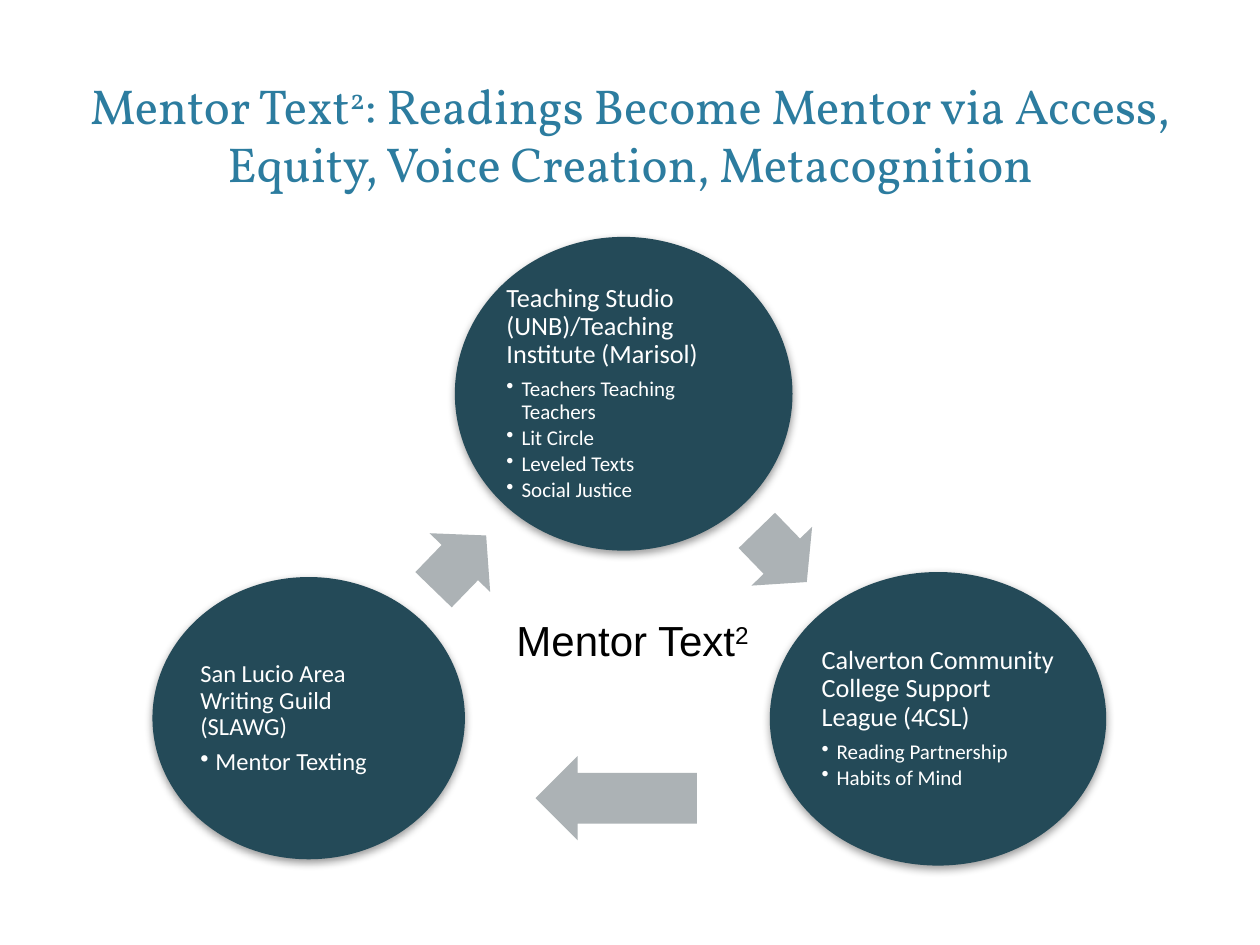
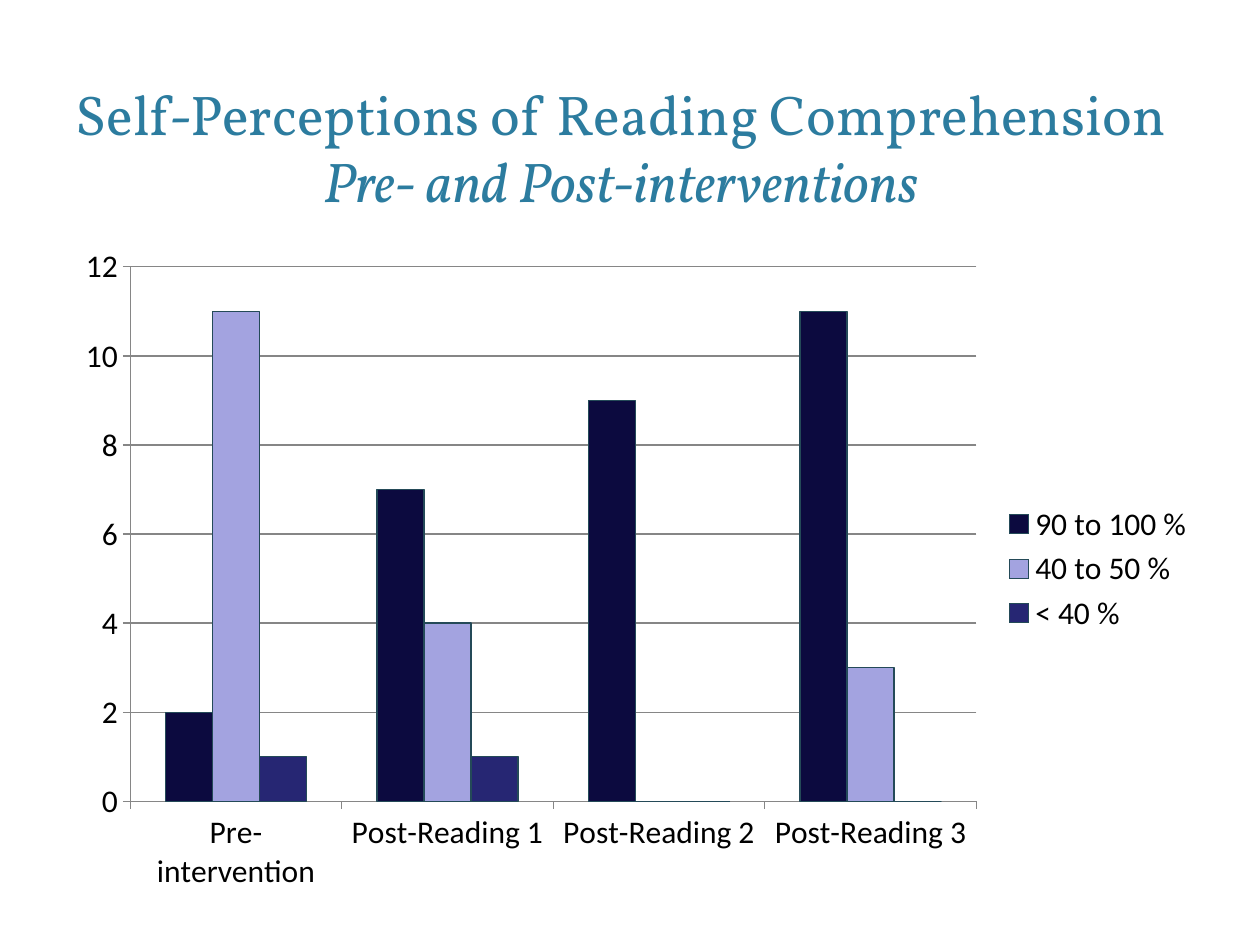
import pptx
import pptx.chart.data
import pptx.dml.color
import pptx.enum.chart
import pptx.enum.shapes
import pptx.enum.text
import pptx.oxml
import pptx.oxml.ns
import pptx.util
from lxml import etree

Inches, Pt = pptx.util.Inches, pptx.util.Pt
RGBColor = pptx.dml.color.RGBColor
MSO_SHAPE = pptx.enum.shapes.MSO_SHAPE
MSO_ANCHOR = pptx.enum.text.MSO_ANCHOR
PP_ALIGN = pptx.enum.text.PP_ALIGN
qn = pptx.oxml.ns.qn

TITLE_BLUE = RGBColor(0x2C, 0x7C, 0x9F)
TEAL = RGBColor(0x24, 0x4A, 0x58)
ARROW_GRAY = RGBColor(0xAC, 0xB2, 0xB5)
AXIS_GRAY = RGBColor(0x86, 0x86, 0x86)
WHITE = RGBColor(0xFF, 0xFF, 0xFF)
BLACK = RGBColor(0, 0, 0)
NAVY = RGBColor(0x0C, 0x0A, 0x3F)
LAVENDER = RGBColor(0xA3, 0xA3, 0xE0)
INDIGO = RGBColor(0x26, 0x26, 0x73)

TITLE_FONT, BODY_FONT, LABEL_FONT = "Vollkorn", "Calibri", "Arial"

SHADOW = """<a:effectLst xmlns:a="http://schemas.openxmlformats.org/drawingml/2006/main">
<a:outerShdw blurRad="63500" dist="25400" dir="5400000" rotWithShape="0">
<a:srgbClr val="000000"><a:alpha val="40000"/></a:srgbClr></a:outerShdw></a:effectLst>"""

# Circles: box, text box, heading, heading size, bullets, bullet size
CIRCLES = [
    ((3.61, 1.88, 2.68, 2.49), (4, 2.24, 1.9, 1.76),
     "Teaching Studio (UNB)/Teaching Institute (Marisol)", 15,
     ["Teachers Teaching Teachers", "Lit Circle", "Leveled Texts", "Social Justice"], 12),
    ((6.11, 4.54, 2.67, 2.33), (6.5, 4.88, 1.89, 1.64),
     "Calverton Community College Support League (4CSL)", 15,
     ["Reading Partnership", "Habits of Mind"], 12),
    ((1.21, 4.58, 2.48, 2.24), (1.57, 4.91, 1.76, 1.59),
     "San Lucio Area Writing Guild (SLAWG)", 14, ["Mentor Texting"], 14),
]
# Arrows: box, rotation
ARROWS = [
    ((5.92, 4.08, 0.57, 0.67), 45.9),
    ((4.25, 6, 1.28, 0.67), 180),
    ((3.35, 4.13, 0.6, 0.67), 314.1),
]

CATEGORIES = ["Pre-intervention", "Post-Reading 1", "Post-Reading 2", "Post-Reading 3"]
SERIES = [
    ("90 to 100 %", (2, 7, 9, 11), NAVY),
    ("40 to 50 %", (11, 4, 0, 3), LAVENDER),
    ("< 40 %", (1, 1, 0, 0), INDIGO),
]


def inches(box):
    return [Inches(v) for v in box]


def set_font(font, name, size, color):
    font.name, font.size = name, Pt(size)
    font.color.rgb = color


def add_run(p, text, superscript=False):
    r = p.add_run()
    r.text = text
    if superscript:
        r.font._element.set("baseline", "30000")
    return r


def add_title_slide(prs, box, size):
    """Add a title-only slide; return it with its title paragraph."""
    s = prs.slides.add_slide(prs.slide_layouts[5])
    title = s.shapes.title
    title.left, title.top, title.width, title.height = inches(box)
    tf = title.text_frame
    tf.auto_size = pptx.enum.text.MSO_AUTO_SIZE.NONE
    tf.vertical_anchor = MSO_ANCHOR.BOTTOM
    p = tf.paragraphs[0]
    p.alignment = PP_ALIGN.CENTER
    set_font(p.font, TITLE_FONT, size, TITLE_BLUE)
    return s, p


def add_plain_shape(s, kind, box, color):
    sp = s.shapes.add_shape(kind, *inches(box))
    sp.shadow.inherit = False
    sp.fill.solid()
    sp.fill.fore_color.rgb = color
    sp.line.fill.background()
    return sp


def add_bullet(p):
    pPr = p._p.get_or_add_pPr()
    pPr.set("marL", str(Inches(0.12)))
    pPr.set("indent", str(-Inches(0.12)))
    bullet = etree.Element(qn("a:buChar"), char="•")
    pPr.insert_element_before(bullet, "a:tabLst", "a:defRPr", "a:extLst")


def add_circle(s, box, text_box, heading, heading_size, bullets, bullet_size):
    sp = add_plain_shape(s, MSO_SHAPE.OVAL, box, TEAL)
    spPr = sp._element.spPr
    spPr.replace(spPr.find(qn("a:effectLst")), pptx.oxml.parse_xml(SHADOW))

    tf = s.shapes.add_textbox(*inches(text_box)).text_frame
    tf.word_wrap = True
    tf.vertical_anchor = MSO_ANCHOR.MIDDLE
    tf.margin_left = tf.margin_right = tf.margin_top = tf.margin_bottom = Inches(0.02)
    for i, text in enumerate([heading] + bullets):
        p = tf.paragraphs[0] if i == 0 else tf.add_paragraph()
        size, gap = (bullet_size, 0.15) if i else (heading_size, 0.35)
        add_run(p, text)
        set_font(p.font, BODY_FONT, size, WHITE)
        p.line_spacing = 0.9
        p.space_after = Pt(round(size * gap, 1))
        if i:
            p.level = 1
            add_bullet(p)


def add_arrow(s, box, rotation):
    sp = add_plain_shape(s, MSO_SHAPE.RIGHT_ARROW, box, ARROW_GRAY)
    sp.adjustments[0], sp.adjustments[1] = 0.6, 0.5
    sp.rotation = rotation


def add_center_label(s, box):
    tf = s.shapes.add_textbox(*inches(box)).text_frame
    tf.word_wrap = True
    p = tf.paragraphs[0]
    set_font(p.font, LABEL_FONT, 24, BLACK)
    add_run(p, "Mentor Text")
    add_run(p, "2", superscript=True)


def add_column_chart(s, box):
    data = pptx.chart.data.CategoryChartData()
    data.categories = CATEGORIES
    for name, values, _ in SERIES:
        data.add_series(name, values)
    chart = s.shapes.add_chart(
        pptx.enum.chart.XL_CHART_TYPE.COLUMN_CLUSTERED, *inches(box), data).chart
    set_font(chart.font, BODY_FONT, 18, BLACK)
    chart.has_title = False
    chart.has_legend = True
    chart.legend.position = pptx.enum.chart.XL_LEGEND_POSITION.RIGHT
    chart.legend.include_in_layout = False

    # Columns
    plot = chart.plots[0]
    plot.gap_width, plot.overlap, plot.vary_by_categories = 150, 0, False
    for series, (_, _, color) in zip(plot.series, SERIES):
        series.format.fill.solid()
        series.format.fill.fore_color.rgb = color
        series.format.line.color.rgb = TEAL
        series.format.line.width = Pt(0.75)

    # Axes
    value_axis = chart.value_axis
    value_axis.minimum_scale, value_axis.maximum_scale = 0, 12
    value_axis.major_unit = 2
    value_axis.has_major_gridlines = True
    for axis in (chart.category_axis, value_axis):
        axis.major_tick_mark = pptx.enum.chart.XL_TICK_MARK.OUTSIDE
    for part in (chart.category_axis, value_axis, value_axis.major_gridlines):
        part.format.line.color.rgb = AXIS_GRAY
        part.format.line.width = Pt(0.75)


def build_cycle_slide(prs):
    s, p = add_title_slide(prs, (0.6, 0.12, 8.8, 1.46), 28)
    add_run(p, "Mentor Text")
    add_run(p, "2", superscript=True)
    add_run(p, ": Readings Become Mentor via Access, Equity, Voice Creation, Metacognition")
    for circle, arrow in zip(CIRCLES, ARROWS):
        add_circle(s, *circle)
        add_arrow(s, *arrow)
    add_center_label(s, (4, 4.83, 2.25, 0.51))


def build_chart_slide(prs):
    s, p = add_title_slide(prs, (0, 0.08, 9.86, 1.67), 32)
    add_run(p, "Self-Perceptions of Reading Comprehension")
    p.add_line_break()
    add_run(p, "Pre- and Post-interventions").font.italic = True
    add_column_chart(s, (0.5, 1.86, 9.08, 5.31))


def main():
    prs = pptx.Presentation()
    prs.slide_width, prs.slide_height = Inches(10), Inches(7.5)
    build_cycle_slide(prs)
    build_chart_slide(prs)
    prs.save("out.pptx")


if __name__ == "__main__":
    main()
